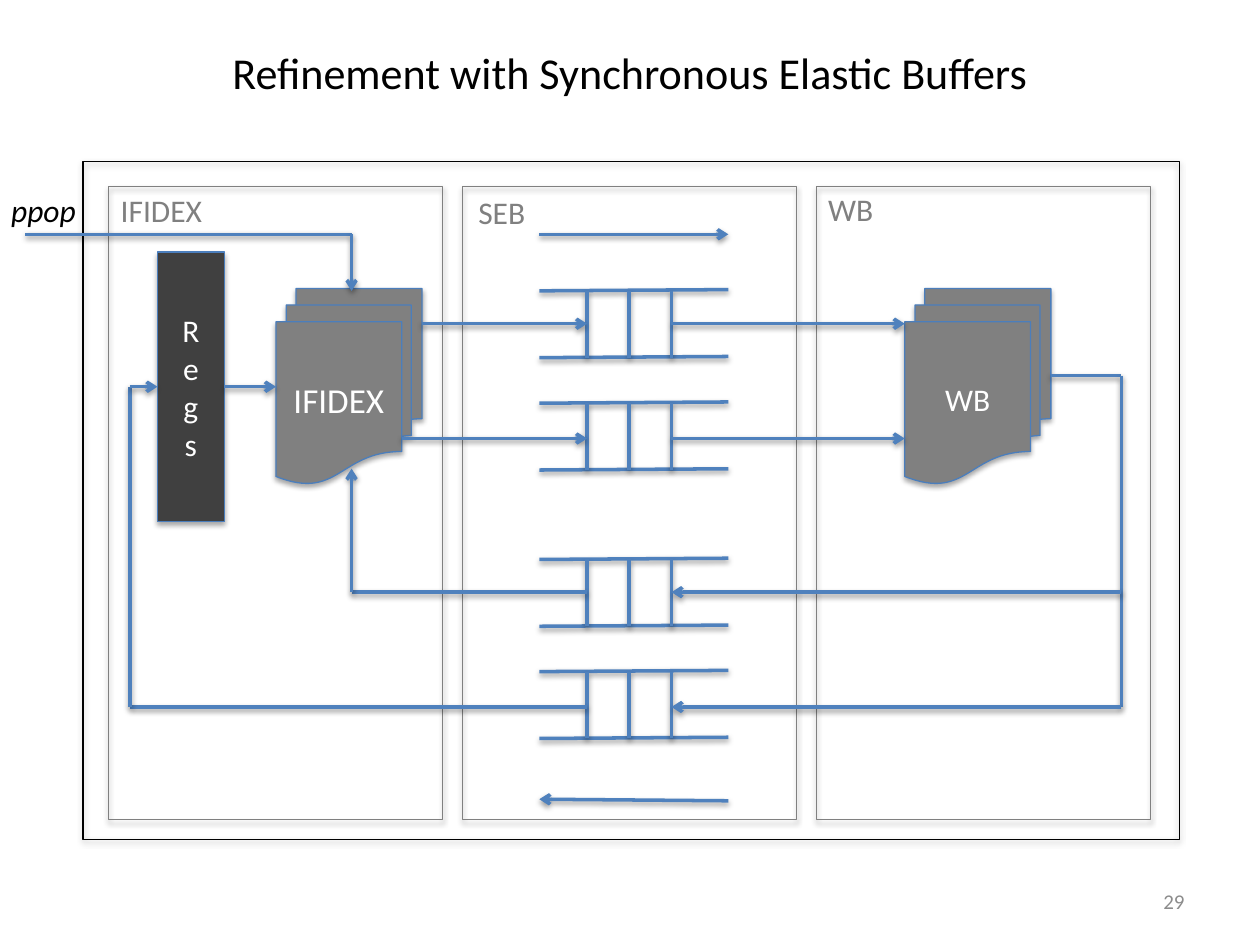
from dataclasses import dataclass
from typing import Optional

from lxml.etree import SubElement
from pptx import Presentation
from pptx.dml.color import RGBColor
from pptx.enum.shapes import MSO_CONNECTOR, MSO_SHAPE
from pptx.enum.text import MSO_ANCHOR, PP_ALIGN
from pptx.oxml.ns import qn
from pptx.util import Pt

COLORS = {
    "wire": "4F81BD",
    "edge": "4B7EBC",
    "gray": "808080",
    "dark": "404040",
    "black": "000000",
    "white": "FFFFFF",
    "number": "8C8C8C",
}
FONT = "Calibri"

# Shared positions, in points
PANEL_LEFT, PANEL_TOP, PANEL_STEP = 61.9, 106.6, 202.3
BUFFER_LEFT, BUFFER_RIGHT, BUFFER_HEIGHT = 308.2, 416.2, 38.2
CELL_LEFT, CELL_STEP = 335.5, 24.1
CELL_RIGHT = CELL_LEFT + 2 * CELL_STEP
RAIL_RISE = 0.7
STAGE_TOP, STAGE_WIDTH, STAGE_HEIGHT = 164.9, 83.5, 111.6
IFIDEX_LEFT, WB_LEFT = 157.7, 517
REGS_LEFT, REGS_WIDTH, REGS_MIDDLE = 90, 38.2, 221
LEFT_RAIL, IFIDEX_PORT, RIGHT_RAIL = 74.2, 200.9, 640.8
INPUT_Y = 133.9
BUFFER_TOPS = (166.2, 230.4, 319.7, 383.8)
LANES = (185, 250.6, 338.4, 404)


@dataclass
class Box:
    left: float
    top: float
    width: float
    height: float
    line: str
    fill: Optional[str] = None
    kind: MSO_SHAPE = MSO_SHAPE.RECTANGLE
    text: str = ""
    size: float = 18


@dataclass
class Label:
    text: str
    left: float
    top: float
    width: float
    height: float = 29.1
    size: float = 18
    color: str = "gray"
    align: PP_ALIGN = PP_ALIGN.LEFT
    anchor: MSO_ANCHOR = MSO_ANCHOR.TOP
    wrap: bool = False
    italic: bool = False


@dataclass
class Wire:
    points: list[tuple[float, float]]
    arrow: bool = True


def rgb(name: str) -> RGBColor:
    return RGBColor.from_string(COLORS[name])


def add_shadow(shape, distance: float, opacity: int) -> None:
    effects = SubElement(shape._element.spPr, qn("a:effectLst"))
    shadow = SubElement(effects, qn("a:outerShdw"), blurRad=str(Pt(3.1)),
                        dist=str(Pt(distance)), dir="5400000", rotWithShape="0")
    color = SubElement(shadow, qn("a:srgbClr"), val=COLORS["black"])
    SubElement(color, qn("a:alpha"), val=str(opacity * 1000))


def write_text(text_frame, text: str, size: float, color: str,
               align: PP_ALIGN, italic: bool = False) -> None:
    text_frame.text = text
    for paragraph in text_frame.paragraphs:
        paragraph.alignment = align
        for run in paragraph.runs:
            run.font.name = FONT
            run.font.size = Pt(size)
            run.font.italic = italic
            run.font.color.rgb = rgb(color)


def draw_box(slide, box: Box) -> None:
    shape = slide.shapes.add_shape(box.kind, Pt(box.left), Pt(box.top),
                                   Pt(box.width), Pt(box.height))
    if box.fill:
        shape.fill.solid()
        shape.fill.fore_color.rgb = rgb(box.fill)
    else:
        shape.fill.background()
    shape.line.color.rgb = rgb(box.line)
    shape.line.width = Pt(0.75)
    add_shadow(shape, 1.8, 35)
    if box.text:
        shape.text_frame.vertical_anchor = MSO_ANCHOR.MIDDLE
        write_text(shape.text_frame, box.text, box.size, "white", PP_ALIGN.CENTER)


def draw_label(slide, label: Label) -> None:
    text_box = slide.shapes.add_textbox(Pt(label.left), Pt(label.top),
                                        Pt(label.width), Pt(label.height))
    text_box.text_frame.word_wrap = label.wrap
    text_box.text_frame.vertical_anchor = label.anchor
    write_text(text_box.text_frame, label.text, label.size, label.color,
               label.align, label.italic)


def draw_wire(slide, wire: Wire) -> None:
    """Draw one connector per segment; the arrowhead goes on the last."""
    for start, end in zip(wire.points, wire.points[1:]):
        connector = slide.shapes.add_connector(
            MSO_CONNECTOR.STRAIGHT, *(Pt(value) for value in start + end))
        connector.line.color.rgb = rgb("wire")
        connector.line.width = Pt(2)
        if wire.arrow and end == wire.points[-1]:
            SubElement(connector.line._get_or_add_ln(), qn("a:tailEnd"), type="arrow")
        add_shadow(connector, 1.6, 38)


def draw_buffer(slide, top: float) -> None:
    bottom = top + BUFFER_HEIGHT
    for y in (top, bottom):
        rail = [(BUFFER_LEFT, y), (BUFFER_RIGHT, y - RAIL_RISE)]
        draw_wire(slide, Wire(rail, arrow=False))
    for column in range(3):
        x = CELL_LEFT + column * CELL_STEP
        draw_wire(slide, Wire([(x, top), (x, bottom)], arrow=False))


def main() -> None:
    presentation = Presentation()
    presentation.slide_width, presentation.slide_height = Pt(720), Pt(540)
    slide = presentation.slides.add_slide(presentation.slide_layouts[6])

    # Panels and outer frame
    for column in range(3):
        draw_box(slide, Box(PANEL_LEFT + column * PANEL_STEP, PANEL_TOP,
                            190.8, 361.8, "gray"))
    draw_box(slide, Box(47.5, 92.2, 626.4, 387.4, "black"))

    # Registers and pipeline stages
    draw_box(slide, Box(REGS_LEFT, 144, REGS_WIDTH, 154.1, "edge", "dark",
                        text="R\ne\ng\ns"))
    for left, text, size in ((IFIDEX_LEFT, "IFIDEX", 20), (WB_LEFT, "WB", 18)):
        draw_box(slide, Box(left, STAGE_TOP, STAGE_WIDTH, STAGE_HEIGHT, "edge",
                            "gray", MSO_SHAPE.FLOWCHART_MULTIDOCUMENT, text, size))

    # Elastic buffers
    for top in BUFFER_TOPS:
        draw_buffer(slide, top)

    # Wires
    first, second, third, fourth = LANES
    stage_right = IFIDEX_LEFT + STAGE_WIDTH
    wires = [
        Wire([(REGS_LEFT + REGS_WIDTH, REGS_MIDDLE), (IFIDEX_LEFT, REGS_MIDDLE)]),
        # Forward lanes
        Wire([(stage_right, first), (CELL_LEFT, first)]),
        Wire([(stage_right - 11.5, second), (CELL_LEFT, second)]),
        Wire([(CELL_RIGHT, first), (WB_LEFT, first)]),
        Wire([(CELL_RIGHT, second), (WB_LEFT, second)]),
        # Feedback lanes
        Wire([(WB_LEFT + STAGE_WIDTH, 214.6), (RIGHT_RAIL, 214.6),
              (RIGHT_RAIL, fourth), (CELL_RIGHT, fourth)]),
        Wire([(CELL_LEFT, fourth), (LEFT_RAIL, fourth),
              (LEFT_RAIL, REGS_MIDDLE), (REGS_LEFT, REGS_MIDDLE)]),
        Wire([(RIGHT_RAIL, third), (CELL_RIGHT, third)]),
        Wire([(CELL_LEFT, third), (IFIDEX_PORT, third), (IFIDEX_PORT, 267.8)]),
        # Flow directions and external input
        Wire([(BUFFER_LEFT, INPUT_Y), (BUFFER_RIGHT, INPUT_Y)]),
        Wire([(BUFFER_RIGHT, 457.6), (BUFFER_LEFT, 456.7)]),
        Wire([(14.4, INPUT_Y), (IFIDEX_PORT, INPUT_Y), (IFIDEX_PORT, 166.3)]),
    ]
    for wire in wires:
        draw_wire(slide, wire)

    # Labels, title and slide number
    labels = [
        Label("IFIDEX", 61.9, 105.8, 61.2),
        Label("SEB", 266.2, 106.9, 41.8),
        Label("WB", 466.2, 105.2, 41),
        Label("ppop", -0.7, 105.4, 56.2, color="black", italic=True),
        Label("Refinement with Synchronous Elastic Buffers", 36, 21.6, 648, 38.9,
              25.2, "black", PP_ALIGN.CENTER, MSO_ANCHOR.MIDDLE, True),
        Label("29", 516, 500.5, 168, 28.8, 12, "number", PP_ALIGN.RIGHT,
              MSO_ANCHOR.MIDDLE, True),
    ]
    for label in labels:
        draw_label(slide, label)

    presentation.save("out.pptx")


if __name__ == "__main__":
    main()
